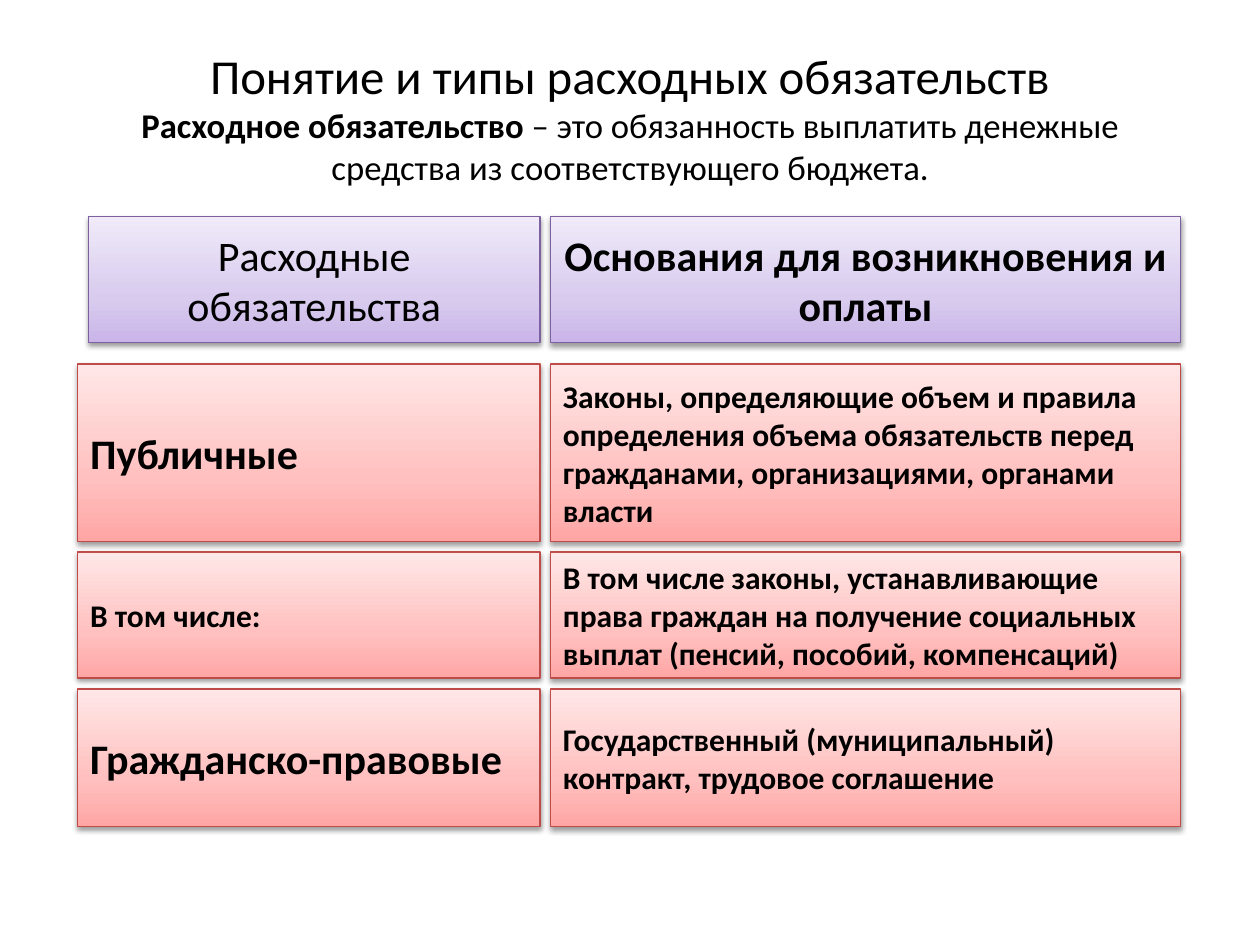
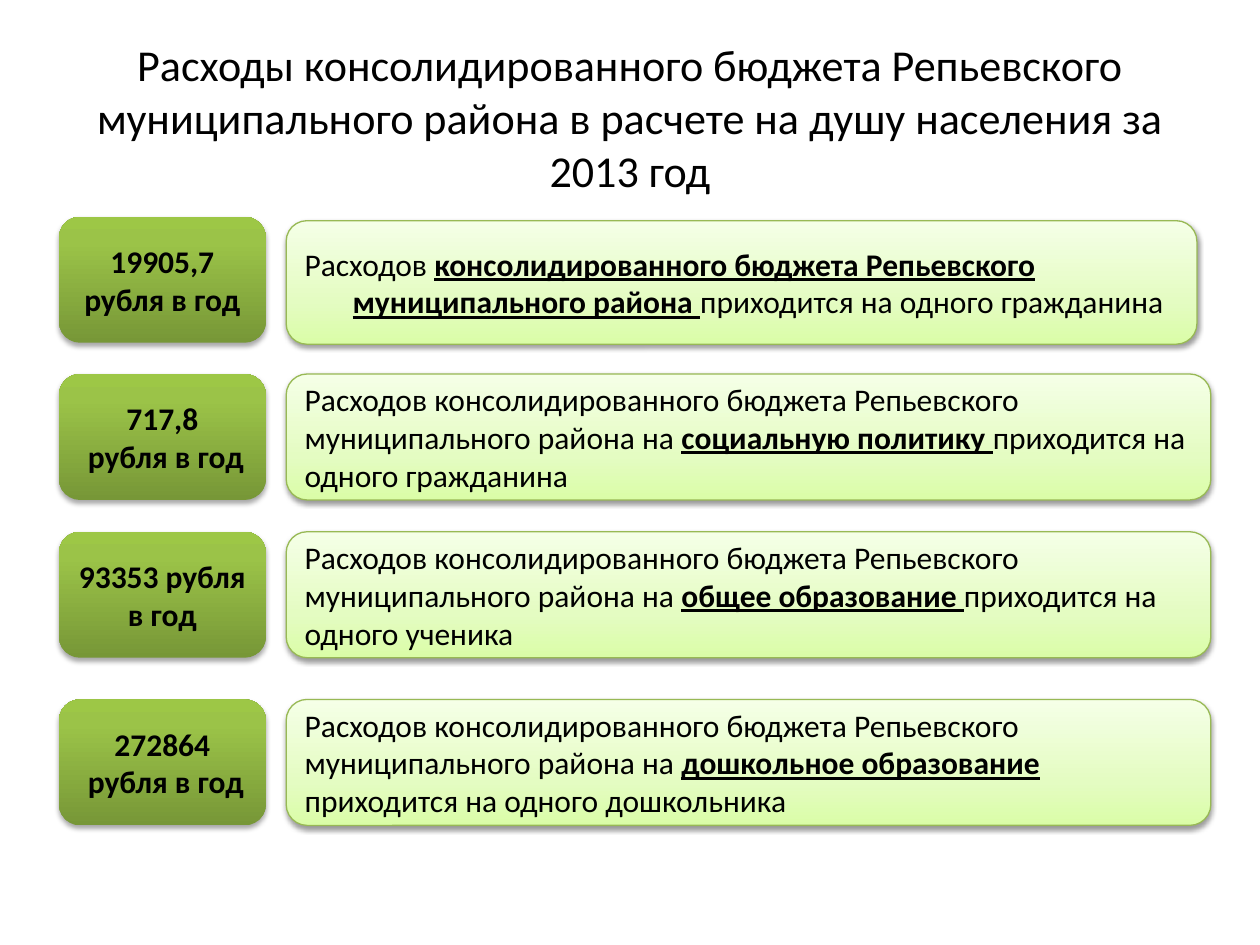
from lxml import etree
from pptx import Presentation
from pptx import util as u
from pptx.dml import color
from pptx.enum import shapes, text
from pptx.oxml import ns

FONT = "Calibri"
HEX = {"ink": "000000", "violet": "7D60A0", "red": "BF4C48", "green": "98B955"}

# Gradient stops (percent, colour) from bottom to top, border and shadow
LOOKS = {
    "head": {"stops": [(0, "C9B5E8"), (35, "D8CBEE"), (100, "F0EAF9")],
             "line": "violet", "alpha": 38, "drop": 1.6},
    "cell": {"stops": [(0, "FFA6A5"), (35, "FFC0BF"), (100, "FFE7E7")],
             "line": "red", "alpha": 38, "drop": 1.6},
    "card": {"stops": [(0, "DAFDA7"), (35, "E4FCC2"), (100, "F5FFE7")],
             "line": "green", "alpha": 38, "drop": 1.6},
    "badge": {"stops": [(0, "779737"), (80, "9BC348"), (100, "9DC746")],
              "line": None, "alpha": 35, "drop": 1.8},
}
RECT = shapes.MSO_SHAPE.RECTANGLE
ROUND = shapes.MSO_SHAPE.ROUNDED_RECTANGLE
LEFT, MID = text.PP_ALIGN.LEFT, text.PP_ALIGN.CENTER


def node(up, tag, **attrs):
    return etree.SubElement(up, ns.qn("a:" + tag),
                            {k: str(v) for k, v in attrs.items()})


def write(para, words, size, bold=False, under=False):
    run = para.add_run()
    run.text = words
    form = {"name": FONT, "size": u.Pt(size), "bold": bold, "underline": under}
    for key, value in form.items():
        setattr(run.font, key, value)
    run.font.color.rgb = color.RGBColor.from_string(HEX["ink"])


def title(slide):
    """Place the title and return its empty paragraph."""
    head = slide.shapes.title
    box = {"left": 1.27, "top": 0.76, "width": 22.86, "height": 3.18}
    for key, value in box.items():
        setattr(head, key, u.Cm(value))
    frame = head.text_frame
    form = {"word_wrap": True, "auto_size": text.MSO_AUTO_SIZE.NONE,
            "vertical_anchor": text.MSO_ANCHOR.MIDDLE}
    for key, value in form.items():
        setattr(frame, key, value)
    para = frame.paragraphs[0]
    para.alignment = MID
    return para


def paint(shape, look):
    """Apply gradient, border and soft shadow."""
    shape.fill.gradient()
    shape.fill.gradient_angle = 90
    props = shape._element.spPr
    stops = props.find(".//" + ns.qn("a:gsLst"))
    stops[:] = []
    for pos, tone in look["stops"]:
        node(node(stops, "gs", pos=pos * 1000), "srgbClr", val=tone)
    if look["line"]:
        shape.line.color.rgb = color.RGBColor.from_string(HEX[look["line"]])
        shape.line.width = u.Pt(0.75)
    else:
        shape.line.fill.background()
    shape.shadow.inherit = False
    shade = node(props.find(ns.qn("a:effectLst")), "outerShdw",
                 blurRad=u.Pt(3.1), dist=u.Pt(look["drop"]),
                 dir=5400000, rotWithShape=0)
    tint = node(shade, "srgbClr", val=HEX["ink"])
    node(tint, "alpha", val=look["alpha"] * 1000)


def panel(slide, kind, look, box, lines, size=18, bold=False, align=LEFT):
    """Draw a filled panel; words between asterisks are bold and underlined."""
    shape = slide.shapes.add_shape(kind, *map(u.Cm, box))
    paint(shape, LOOKS[look])
    frame = shape.text_frame
    frame.word_wrap = True
    frame.vertical_anchor = text.MSO_ANCHOR.MIDDLE
    for i, line in enumerate(lines):
        para = frame.add_paragraph() if i else frame.paragraphs[0]
        para.alignment = align
        for j, words in enumerate(line.split("*")):
            mark = j % 2 == 1
            write(para, words, size, bold or mark, mark)
    return shape


def duties(slide):
    # Title with a definition below it
    para = title(slide)
    write(para, "Понятие и типы расходных обязательств", 27.9)
    para.add_line_break()
    write(para, "Расходное обязательство ", 19.8, True)
    write(para, "– это обязанность выплатить денежные средства "
                "из соответствующего бюджета.", 19.8)

    # Column heads
    left, right, wide, edge = 1.57, 11.1, 12.7, 10.89
    panel(slide, RECT, "head", (1.78, 4.37, edge - 1.78, 2.54),
          ["Расходные обязательства"], 24, align=MID)
    panel(slide, RECT, "head", (right, 4.37, wide, 2.54),
          ["Основания для возникновения и оплаты"], 24, True, MID)

    # Rows: top, height, type, size of type, grounds
    rows = [
        (7.34, 3.58, "Публичные", 24,
         "Законы, определяющие объем и правила определения объема "
         "обязательств перед гражданами, организациями, органами власти"),
        (11.13, 2.54, "В том числе:", 18,
         "В том числе законы, устанавливающие права граждан на получение "
         "социальных выплат (пенсий, пособий, компенсаций)"),
        (13.89, 2.77, "Гражданско-правовые", 24,
         "Государственный (муниципальный) контракт, трудовое соглашение"),
    ]
    for top, high, name, size, ground in rows:
        panel(slide, RECT, "cell", (left, top, edge - left, high),
              [name], size, True)
        panel(slide, RECT, "cell", (right, top, wide, high),
              [ground], bold=True)


def costs(slide):
    write(title(slide), "Расходы консолидированного бюджета Репьевского "
          "муниципального района в расчете на душу населения за 2013 год", 25.2)

    # Overall spending has a hanging indent
    first = panel(slide, ROUND, "card", (5.77, 4.45, 18.36, 2.49),
                  ["Расходов *консолидированного бюджета Репьевского "
                   "муниципального района *приходится на одного гражданина"])
    para = first.text_frame.paragraphs[0]
    para.space_before = u.Pt(3.6)
    props = para._p.get_or_add_pPr()
    props.set("marL", str(u.Cm(0.97)))
    props.set("indent", str(-u.Cm(0.97)))

    # Spending by purpose
    tops = [4.37, 7.54, 10.72, 14.1]
    goals = [("социальную политику", "гражданина"),
             ("общее образование", "ученика"),
             ("дошкольное образование", "дошкольника")]
    for top, (goal, who) in zip(tops[1:], goals):
        panel(slide, ROUND, "card", (5.77, top, 18.64, 2.54),
              ["Расходов консолидированного бюджета Репьевского муниципального "
               f"района на *{goal} *приходится на одного {who}"])

    # Sums per head
    sums = [["19905,7", "рубля в год"], ["717,8", " рубля в год"],
            ["93353 рубля в год"], ["272864", " рубля в год"]]
    for top, lines in zip(tops, sums):
        panel(slide, ROUND, "badge", (1.19, top, 4.17, 2.54),
              lines, bold=True, align=MID)


def main():
    deck = Presentation()
    deck.slide_width, deck.slide_height = u.Cm(25.4), u.Cm(19.05)
    for build in (duties, costs):
        build(deck.slides.add_slide(deck.slide_layouts[5]))
    deck.save("out.pptx")


if __name__ == "__main__":
    main()
